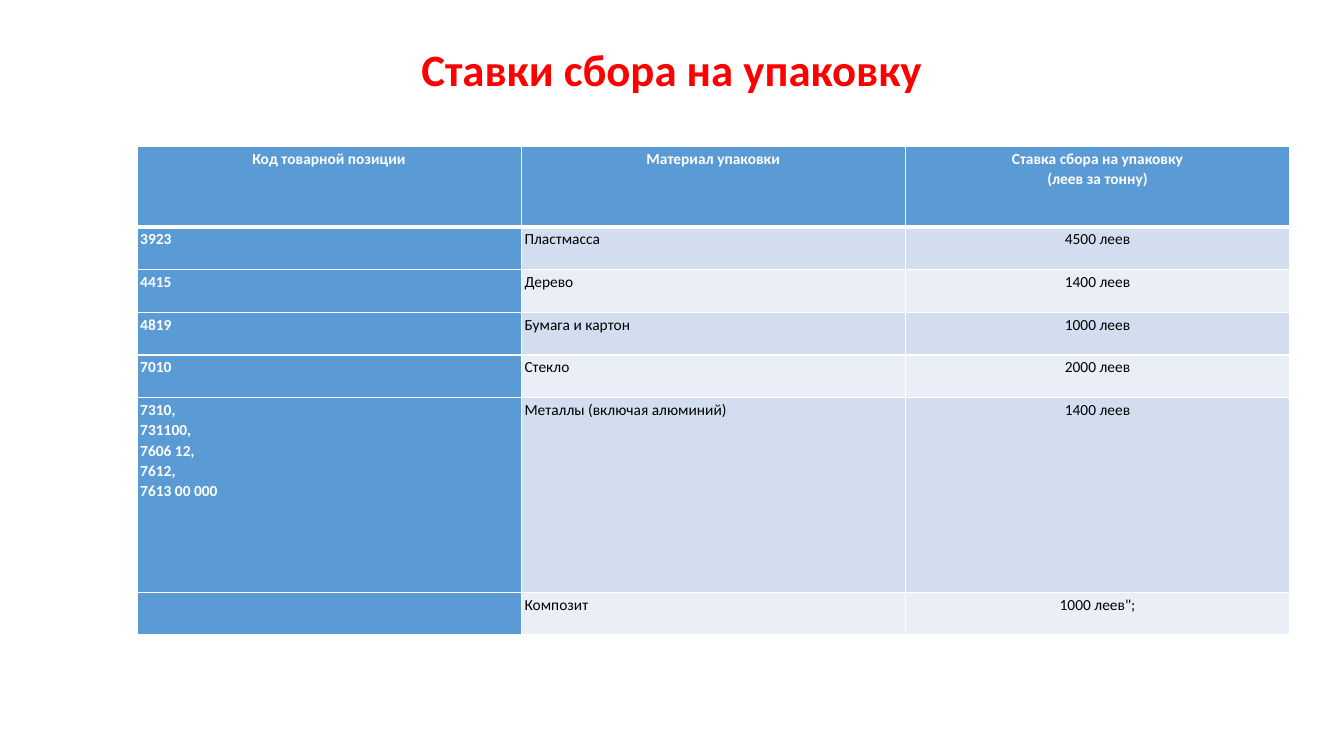
from dataclasses import dataclass

from lxml import etree
from pptx import Presentation
from pptx.dml.color import RGBColor
from pptx.enum.text import MSO_ANCHOR, PP_ALIGN
from pptx.oxml.ns import qn
from pptx.util import Pt

LEFT, CENTER = PP_ALIGN.LEFT, PP_ALIGN.CENTER
MIDDLE = MSO_ANCHOR.MIDDLE


@dataclass(frozen=True)
class Theme:
    font: str = "Calibri"
    title_size: float = 32
    cell_size: float = 11
    title_color: str = "FF0000"
    accent: str = "5B9BD5"
    bands: tuple = ("D2DEEF", "EAEFF7")
    white: str = "FFFFFF"
    black: str = "000000"
    thin_line: float = 1
    thick_line: float = 3


class SlideBuilder:
    def __init__(self, page, theme):
        self.page = page
        self.theme = theme

    def style_text(self, frame, size, color, bold, align, spacing):
        for para in frame.paragraphs:
            para.alignment = align
            para.line_spacing = spacing
            font = para.font
            font.name, font.size, font.bold = self.theme.font, Pt(size), bold
            font.color.rgb = RGBColor.from_string(color)

    def title(self, text, left, top, width, height):
        box = self.page.shapes.add_textbox(Pt(left), Pt(top), Pt(width), Pt(height))
        frame = box.text_frame
        frame.word_wrap = True
        frame.vertical_anchor = MIDDLE
        frame.text = text
        self.style_text(frame, self.theme.title_size, self.theme.title_color,
                        True, CENTER, 0.9)

    def border(self, cell, side, width):
        properties = cell._tc.get_or_add_tcPr()
        line = etree.SubElement(properties, qn(f"a:ln{side}"), w=str(Pt(width)))
        fill = etree.SubElement(line, qn("a:solidFill"))
        etree.SubElement(fill, qn("a:srgbClr"), val=self.theme.white)

    def cell(self, cell, text, row, column):
        theme = self.theme
        is_accent = row == 0 or column == 0
        cell.margin_left = cell.margin_right = Pt(2.4)
        cell.margin_top = cell.margin_bottom = Pt(1.2)

        # The rule under the header is shared by the first two rows
        thick_side = {0: "B", 1: "T"}.get(row)
        for side in "LRTB":
            width = theme.thick_line if side == thick_side else theme.thin_line
            self.border(cell, side, width)

        cell.fill.solid()
        fill = theme.accent if is_accent else theme.bands[(row - 1) % 2]
        cell.fill.fore_color.rgb = RGBColor.from_string(fill)

        cell.text_frame.text = text
        self.style_text(cell.text_frame, theme.cell_size,
                        theme.white if is_accent else theme.black, is_accent,
                        CENTER if row == 0 or column == 2 else LEFT, 1.07)

    def table(self, rows, left, top, width, heights):
        columns = len(rows[0])
        table = self.page.shapes.add_table(
            len(rows), columns, Pt(left), Pt(top), Pt(width), Pt(sum(heights))).table
        for column in table.columns:
            column.width = Pt(width / columns)
        for row, (texts, height) in enumerate(zip(rows, heights)):
            table.rows[row].height = Pt(height)
            for column, text in enumerate(texts):
                self.cell(table.cell(row, column), text, row, column)


RATES = [
    ("Код товарной позиции", "Материал упаковки",
     "Ставка сбора на упаковку\v(леев за тонну)"),
    ("3923", "Пластмасса", "4500 леев"),
    ("4415", "Дерево", "1400 леев"),
    ("4819", "Бумага и картон", "1000 леев"),
    ("7010", "Стекло", "2000 леев"),
    ("7310,\n731100,\n7606 12,\n7612,\n7613 00 000",
     "Металлы (включая алюминий)", "1400 леев"),
    ("", "Композит", '1000 леев";'),
]


def main():
    deck = Presentation()
    deck.slide_width, deck.slide_height = Pt(960), Pt(540)
    builder = SlideBuilder(deck.slides.add_slide(deck.slide_layouts[6]), Theme())

    # Heading
    builder.title("Ставки сбора на упаковку", 66, 38, 828, 27)

    # Rates by packaging material
    header, single, metals = 57.6, 30.5, 139
    builder.table(RATES, 97.8, 104.6, 823.5,
                  [header] + [single] * 4 + [metals, single])

    deck.save("out.pptx")


if __name__ == "__main__":
    main()
